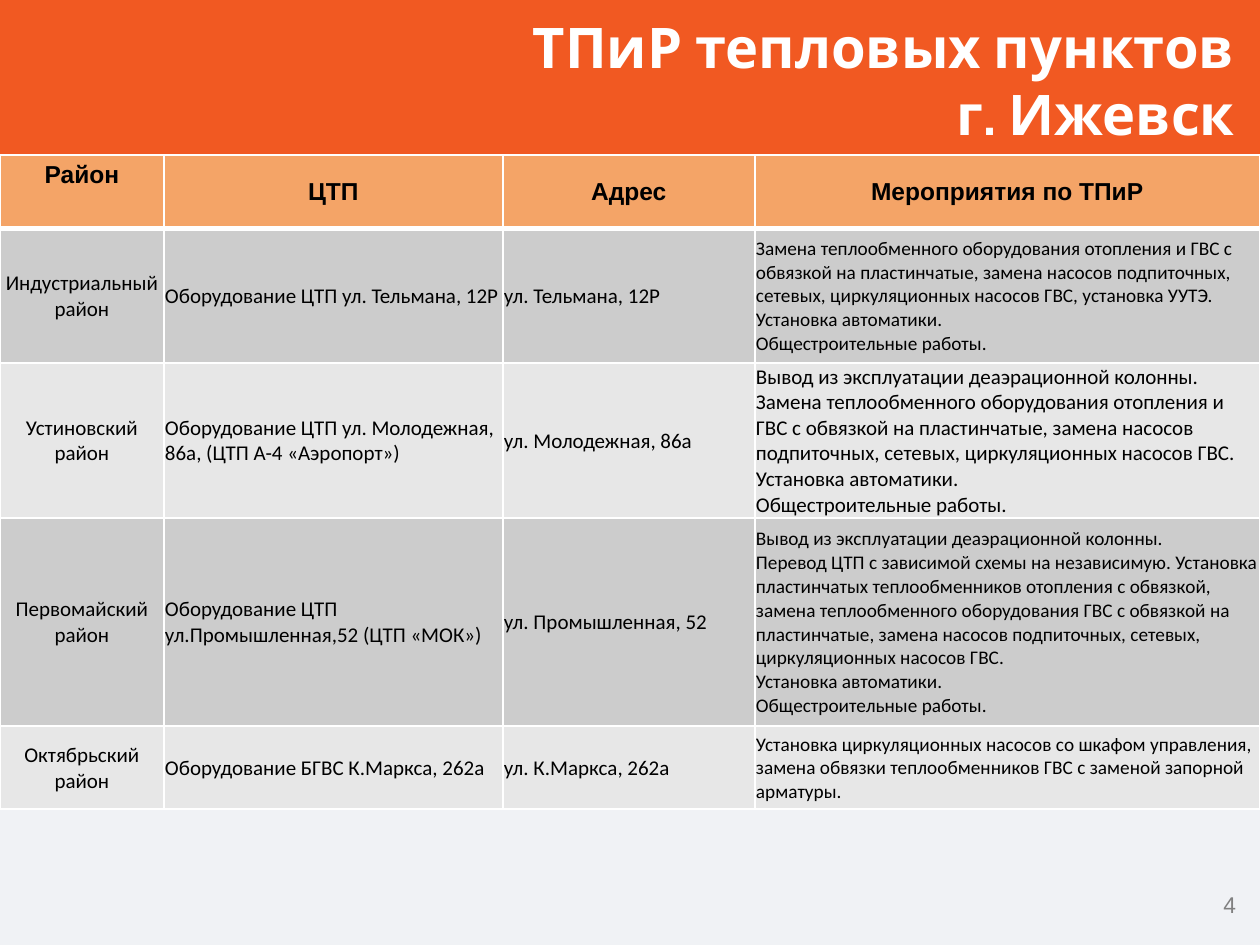
"""Build the slide on heating point upgrades in Izhevsk."""
from lxml import etree
from pptx import Presentation, util as u
from pptx.dml.color import RGBColor
from pptx.enum import shapes, text
from pptx.oxml import ns

Pt = u.Pt
LEFT, MID, RIGHT = text.PP_ALIGN.LEFT, text.PP_ALIGN.CENTER, text.PP_ALIGN.RIGHT


def paint(fill, hue):
    fill.solid()
    fill.fore_color.rgb = RGBColor.from_string(hue)


def write(frame, words, size=12, font="Calibri", hue="000000", bold=False,
          align=LEFT, gap=None):
    frame.word_wrap = True
    for i, line in enumerate(words.split("\n")):
        para = frame.add_paragraph() if i else frame.paragraphs[0]
        para.text = line
        para.alignment = align
        para.line_spacing = gap
        for run in para.runs:
            run.font.size, run.font.name, run.font.bold = Pt(size), font, bold
            paint(run.font.fill, hue)


deck = Presentation()
deck.slide_width, deck.slide_height = Pt(720), Pt(540)
slide = deck.slides.add_slide(deck.slide_layouts[5])

for top, tall, hue in ((0, 540, "F0F2F5"), (-1.4, 90.7, "F15922")):
    band = slide.shapes.add_shape(shapes.MSO_SHAPE.RECTANGLE, Pt(-0.7), Pt(top),
                                  Pt(721.4), Pt(tall))
    band.shadow.inherit = False
    paint(band.fill, hue)
    band.line.fill.background()

num = slide.shapes.add_textbox(Pt(671), Pt(509), Pt(35.3), Pt(15.8))
title = slide.shapes.title
title.left, title.top, title.width, title.height = Pt(176.4), Pt(16.5), Pt(529.2), Pt(57.6)
title.element.getparent().append(title.element)
for box in (num, title):
    frame = box.text_frame
    frame.margin_left = frame.margin_right = frame.margin_top = frame.margin_bottom = 0
    frame.auto_size = text.MSO_AUTO_SIZE.NONE
title.text_frame.vertical_anchor = text.MSO_ANCHOR.MIDDLE
write(num.text_frame, "4", size=13, font="Arial", hue="808080", align=RIGHT)
write(title.text_frame, "ТПиР тепловых пунктов\vг. Ижевск", size=32, font="Cabin",
      hue="FFFFFF", bold=True, align=RIGHT, gap=1.0)

rows = [
    ("Район", "ЦТП", "Адрес", "Мероприятия по ТПиР"),
    ("Индустриальный район", "Оборудование ЦТП ул. Тельмана, 12Р", "ул. Тельмана, 12Р",
     "Замена теплообменного оборудования отопления и ГВС с обвязкой на пластинчатые, "
     "замена насосов подпиточных, сетевых, циркуляционных насосов ГВС, установка УУТЭ. "
     "Установка автоматики.\nОбщестроительные работы."),
    ("Устиновский район", "Оборудование ЦТП ул. Молодежная, 86а, (ЦТП А-4 «Аэропорт»)",
     "ул. Молодежная, 86а",
     "Вывод из эксплуатации деаэрационной колонны.\n"
     "Замена теплообменного оборудования отопления и ГВС с обвязкой на пластинчатые, "
     "замена насосов подпиточных, сетевых, циркуляционных насосов ГВС. "
     "Установка автоматики.\nОбщестроительные работы."),
    ("Первомайский район", "Оборудование ЦТП ул.Промышленная,52 (ЦТП «МОК»)",
     "ул. Промышленная, 52",
     "Вывод из эксплуатации деаэрационной колонны.\n"
     "Перевод ЦТП с зависимой схемы на независимую. Установка пластинчатых "
     "теплообменников отопления с обвязкой, замена теплообменного оборудования ГВС "
     "с обвязкой на пластинчатые, замена насосов подпиточных, сетевых, "
     "циркуляционных насосов ГВС.\nУстановка автоматики.\nОбщестроительные работы."),
    ("Октябрьский район", "Оборудование БГВС К.Маркса, 262а", "ул. К.Маркса, 262а",
     "Установка циркуляционных насосов со шкафом управления, замена обвязки "
     "теплообменников ГВС с заменой запорной арматуры."),
]
wide = [93.6, 193.7, 144, 288.7]
high = [41.8, 77, 88.5, 119, 47.5]
grid = slide.shapes.add_table(5, 4, 0, Pt(88.6), Pt(720), Pt(sum(high))).table
for col, size in zip(grid.columns, wide):
    col.width = Pt(size)
for r, (row, size) in enumerate(zip(rows, high)):
    grid.rows[r].height = Pt(size)
    for c, words in enumerate(row):
        cell = grid.cell(r, c)
        props = cell._tc.get_or_add_tcPr()
        for side in "LRTB":
            thick = 3 if (r, side) in ((0, "B"), (1, "T")) else 1
            line = etree.SubElement(props, ns.qn("a:ln" + side), w=str(Pt(thick)))
            solid = etree.SubElement(line, ns.qn("a:solidFill"))
            etree.SubElement(solid, ns.qn("a:srgbClr"), val="FFFFFF")
        paint(cell.fill, "F4A467" if r == 0 else "CCCCCC" if r % 2 else "E7E7E7")
        if r or c:
            cell.vertical_anchor = text.MSO_ANCHOR.MIDDLE
        if r == 0:
            write(cell.text_frame, words, size=14, font="Arial", bold=True, align=MID)
            continue
        cell.margin_left = cell.margin_right = cell.margin_top = Pt(0.7)
        cell.margin_bottom = 0
        write(cell.text_frame, words, size=11 if c == 3 and r != 2 else 12,
              align=LEFT if c else MID)

deck.save("out.pptx")
